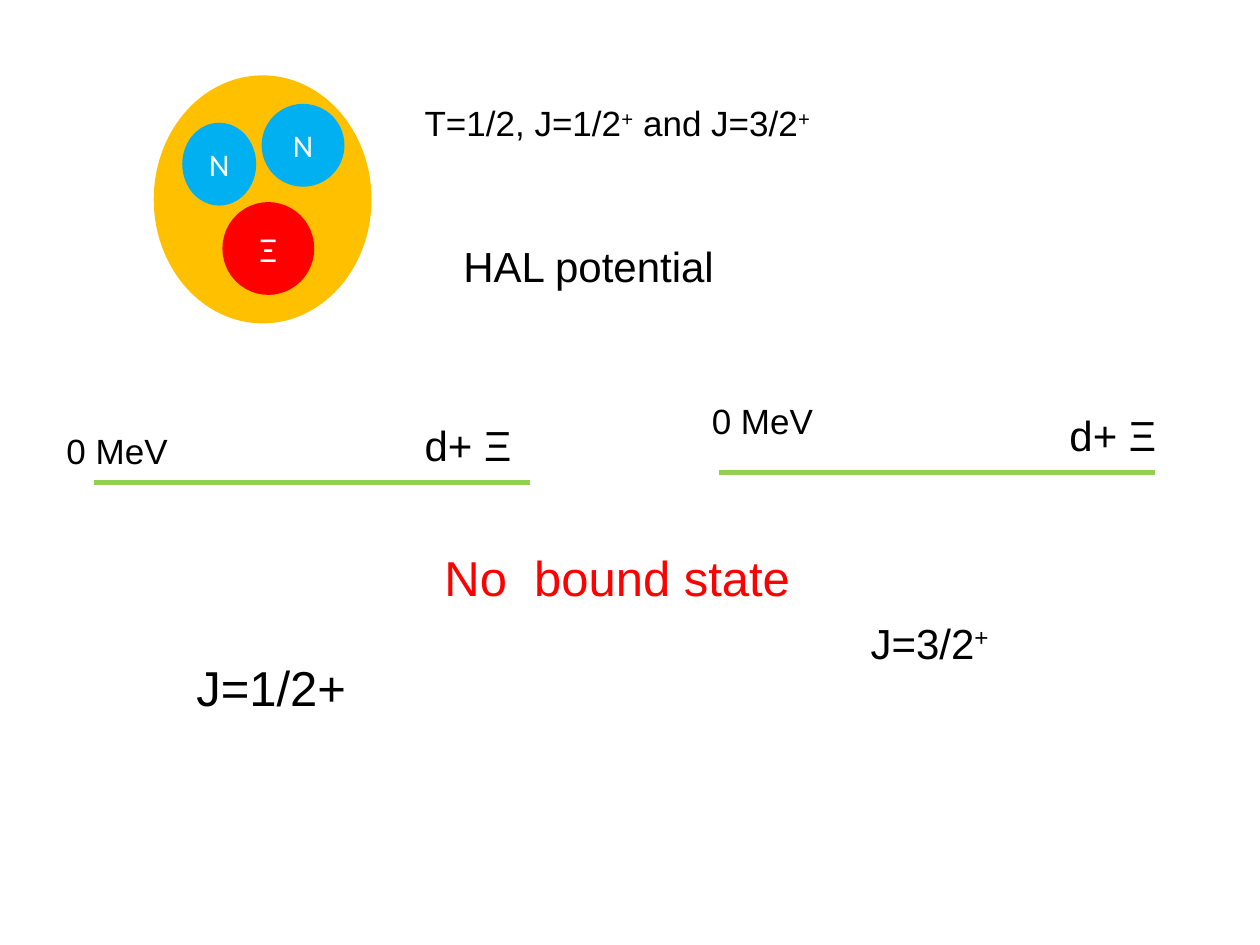
import pptx
import pptx.dml.color
import pptx.enum.shapes
import pptx.enum.text
import pptx.oxml.ns
import pptx.util
from lxml import etree
from pptx.util import Cm, Pt

BLACK = pptx.dml.color.RGBColor(0x00, 0x00, 0x00)
WHITE = pptx.dml.color.RGBColor(0xFF, 0xFF, 0xFF)
RED = pptx.dml.color.RGBColor(0xFF, 0x00, 0x00)
BLUE = pptx.dml.color.RGBColor(0x00, 0xB0, 0xF0)
GOLD = pptx.dml.color.RGBColor(0xFF, 0xC0, 0x00)
GREEN = pptx.dml.color.RGBColor(0x92, 0xD0, 0x50)


def format_run(r, size, font, color):
    r.font.size = Pt(size)
    r.font.name = font
    r.font.color.rgb = color


def add_label(s, x, y, w, h, parts, size, color=BLACK):
    tb = s.shapes.add_textbox(Cm(x), Cm(y), Cm(w), Cm(h))
    tf = tb.text_frame
    tf.word_wrap = False
    tf.auto_size = pptx.enum.text.MSO_AUTO_SIZE.SHAPE_TO_FIT_TEXT
    for i, text in enumerate(parts):
        r = tf.paragraphs[0].add_run()
        r.text = text
        format_run(r, size, "Arial", color)
        if i % 2:
            r._r.get_or_add_rPr().set("baseline", "30000")


def add_ellipse(s, x, y, w, h, color):
    sp = s.shapes.add_shape(pptx.enum.shapes.MSO_SHAPE.OVAL, Cm(x), Cm(y), Cm(w), Cm(h))
    sp.shadow.inherit = False
    sp.fill.solid()
    sp.fill.fore_color.rgb = color
    sp.line.fill.background()
    return sp


def add_particle(s, x, y, w, h, color, name, size):
    sp = add_ellipse(s, x, y, w, h, color)
    sp.line.color.rgb = color
    sp.line.width = Pt(2)
    tf = sp.text_frame
    tf.text = name
    tf.vertical_anchor = pptx.enum.text.MSO_ANCHOR.MIDDLE
    p = tf.paragraphs[0]
    p.alignment = pptx.enum.text.PP_ALIGN.CENTER
    format_run(p.runs[0], size, "Calibri", WHITE)


def add_nucleus(s, x, y, w, h):
    add_ellipse(s, x, y, w, h, GOLD)
    add_particle(s, x + 0.61, y + 0.99, 1.42, 1.6, BLUE, "N", 18)
    add_particle(s, x + 2.21, y + 0.61, 1.6, 1.6, BLUE, "N", 18)
    add_particle(s, x + 1.42, y + 2.59, 1.78, 1.8, RED, "Ξ", 20)


def add_headings(s, x, y):
    add_label(s, x, y, 8.41, 1.12, ["T=1/2, J=1/2", "+", " and J=3/2", "+"], 20)
    add_label(s, x + 0.78, y + 2.79, 5.61, 1.3, ["HAL potential"], 24)


def add_threshold(s, x, y, w, zero_at, channel_x):
    line = s.shapes.add_connector(
        pptx.enum.shapes.MSO_CONNECTOR.STRAIGHT, Cm(x), Cm(y), Cm(x + w), Cm(y))
    line.line.color.rgb = GREEN
    line.line.width = Pt(3)
    etree.SubElement(line._element.spPr, pptx.oxml.ns.qn("a:effectLst"))
    add_label(s, x + zero_at[0], y + zero_at[1], 2.57, 1.12, ["0 MeV"], 20)
    add_label(s, x + channel_x, y - 1.4, 2.29, 1.3, ["d+ Ξ"], 24)


def add_results(s, x, y):
    add_label(s, x, y, 7.57, 1.45, ["No  bound state"], 28, RED)
    add_label(s, x - 5, y + 2.21, 3.56, 1.45, ["J=1/2+"], 28)
    add_label(s, x + 8.59, y + 1.4, 2.95, 1.3, ["J=3/2", "+"], 24)


def main():
    prs = pptx.Presentation()
    prs.slide_width = Cm(25.4)
    prs.slide_height = Cm(19.05)
    s = prs.slides.add_slide(prs.slide_layouts[6])
    add_nucleus(s, 3.1, 1.52, 4.39, 5)
    add_headings(s, 8.31, 1.93)
    add_threshold(s, 1.9, 9.73, 8.79, (-0.81, -1.2), 6.41)
    add_threshold(s, 14.5, 9.53, 8.79, (-0.4, -1.6), 6.81)
    add_results(s, 8.71, 10.92)
    prs.save("out.pptx")


if __name__ == "__main__":
    main()
